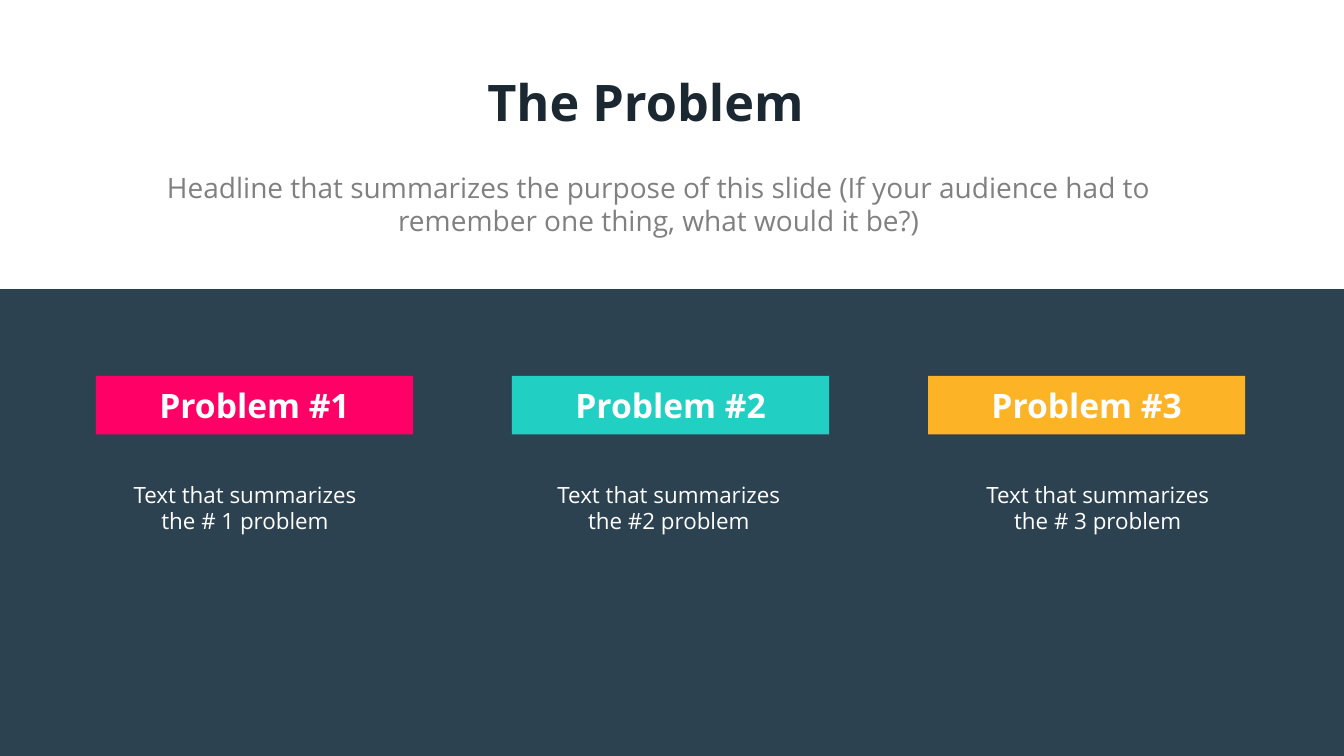
from pptx import Presentation
from pptx.dml.color import RGBColor
from pptx.enum.shapes import MSO_SHAPE
from pptx.enum.text import MSO_ANCHOR, PP_ALIGN
from pptx.util import Pt

FONT = "Open Sans"
WHITE = RGBColor(0xFF, 0xFF, 0xFF)
INK = RGBColor(0x1B, 0x28, 0x31)
GRAY = RGBColor(0x80, 0x80, 0x80)
NAVY = RGBColor(0x2D, 0x42, 0x51)
PINK = RGBColor(0xFF, 0x00, 0x66)
TEAL = RGBColor(0x21, 0xD0, 0xC2)
AMBER = RGBColor(0xFC, 0xB3, 0x26)

TITLE = "The Problem"
HEADLINE = ("Headline that summarizes the purpose of this slide "
            "(If your audience had to remember one thing, what would it be?)")
PROBLEMS = [
    ("Problem #1", PINK, "Text that summarizes the # 1 problem", 83.5, 183),
    ("Problem #2", TEAL, "Text that summarizes the #2 problem", 380.9, 193.7),
    ("Problem #3", AMBER, "Text that summarizes the # 3 problem", 686.2, 195.8),
]
WIDTH, HEIGHT = 960, 540
BAND_TOP = 206.5
LABEL_LEFT, LABEL_STEP, LABEL_TOP = 68.5, 297.2, 268.5
LABEL_WIDTH, LABEL_HEIGHT = 226.6, 41.8
SUMMARY_TOP, SUMMARY_HEIGHT = 339.8, 65.5


def write(sp, text, size, color, bold=False, anchor=MSO_ANCHOR.TOP, wrap=True):
    tf = sp.text_frame
    tf.word_wrap = wrap
    tf.vertical_anchor = anchor
    p = tf.paragraphs[0]
    p.alignment = PP_ALIGN.CENTER
    r = p.add_run()
    r.text = text
    r.font.name = FONT
    r.font.size = Pt(size)
    r.font.bold = bold
    r.font.color.rgb = color


def add_rect(s, left, top, width, height, fill):
    sp = s.shapes.add_shape(MSO_SHAPE.RECTANGLE, Pt(left), Pt(top), Pt(width), Pt(height))
    sp.shadow.inherit = False
    sp.fill.solid()
    sp.fill.fore_color.rgb = fill
    sp.line.fill.background()
    return sp


def add_text(s, left, top, width, height, text, **fmt):
    write(s.shapes.add_textbox(Pt(left), Pt(top), Pt(width), Pt(height)), text, **fmt)


prs = Presentation()
prs.slide_width, prs.slide_height = Pt(WIDTH), Pt(HEIGHT)
s = prs.slides.add_slide(prs.slide_layouts[5])

title = s.shapes.title
title.left, title.top, title.width, title.height = Pt(339.8), Pt(47.5), Pt(242.6), Pt(51.1)
write(title, TITLE, size=36, color=INK, bold=True, wrap=False)
add_text(s, 78.5, 118.1, 784.1, 55.4, HEADLINE, size=20, color=GRAY)
add_rect(s, 0, BAND_TOP, WIDTH, HEIGHT - BAND_TOP, NAVY)

for i, (name, fill, summary, left, width) in enumerate(PROBLEMS):
    label = add_rect(s, LABEL_LEFT + i * LABEL_STEP, LABEL_TOP, LABEL_WIDTH, LABEL_HEIGHT, fill)
    write(label, name, size=24, color=WHITE, bold=True, anchor=MSO_ANCHOR.MIDDLE)
    add_text(s, left, SUMMARY_TOP, width, SUMMARY_HEIGHT, summary, size=16, color=WHITE)

prs.save("out.pptx")
